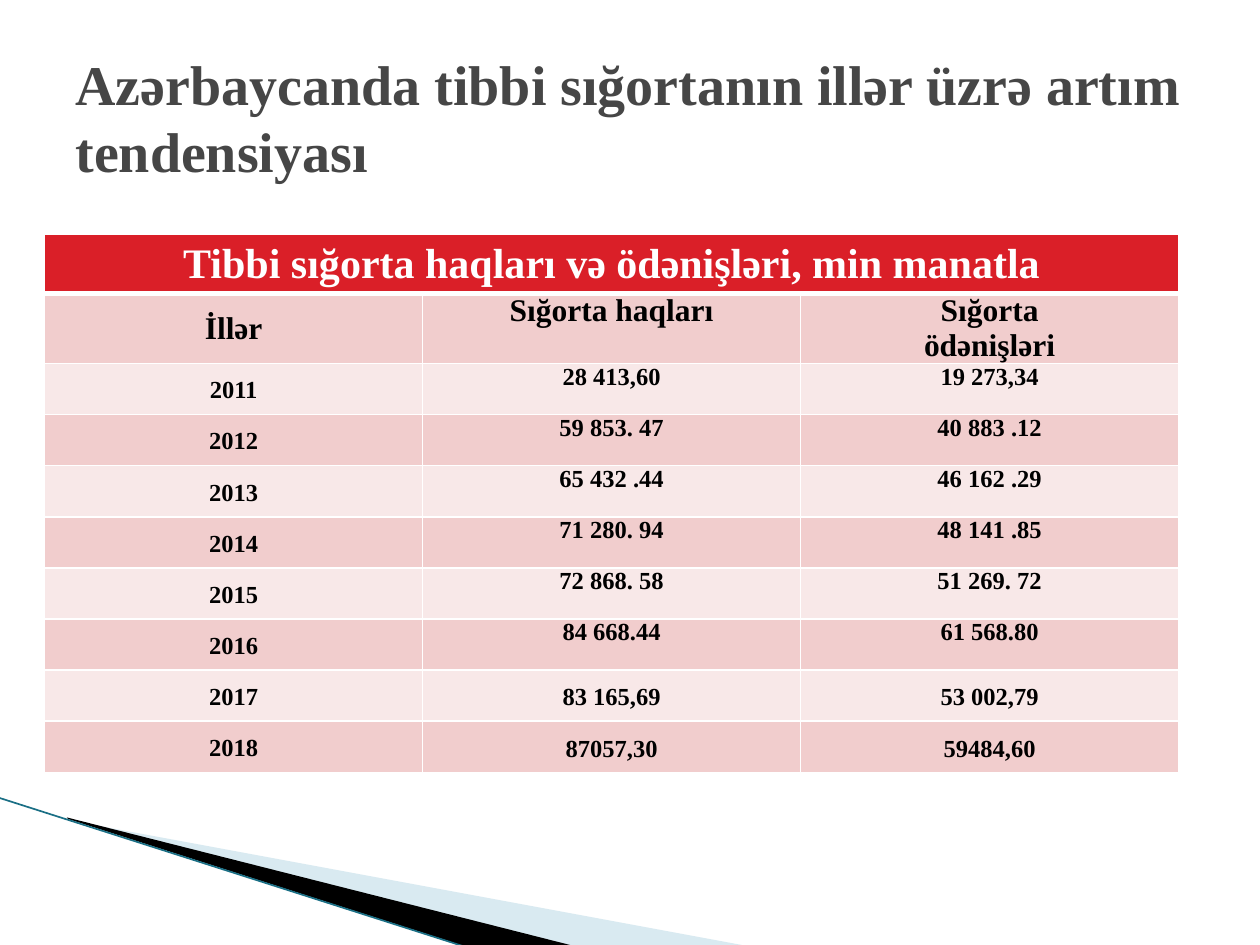
from lxml import etree
from pptx import Presentation
from pptx.dml.color import RGBColor
from pptx.enum.shapes import MSO_CONNECTOR
from pptx.enum.text import MSO_ANCHOR, PP_ALIGN
from pptx.oxml.ns import qn
from pptx.util import Cm, Pt

STRAIGHT = MSO_CONNECTOR.STRAIGHT
TOP, MIDDLE = MSO_ANCHOR.TOP, MSO_ANCHOR.MIDDLE
CENTER, LEFT = PP_ALIGN.CENTER, PP_ALIGN.LEFT
FONT = "Times New Roman"
COLORS = {
    "title": "464646", "header": "DA1F28", "dark_band": "F1CDCD",
    "light_band": "F8E8E8", "white": "FFFFFF", "black": "000000",
    "pale_blue": "A0CBDC", "line": "1A6F85",
}


def add_run(paragraph, text, size, color):
    run = paragraph.add_run()
    run.text = text
    run.font.name = FONT
    run.font.size = Pt(size)
    run.font.bold = True
    run.font.color.rgb = RGBColor.from_string(COLORS[color])


def add_borders(cell, top, bottom):
    """Draw white cell borders; top and bottom are widths in points."""
    properties = cell._tc.get_or_add_tcPr()
    for side, width in (("L", 1), ("R", 1), ("T", top), ("B", bottom)):
        line = etree.SubElement(properties, qn(f"a:ln{side}"), w=str(Pt(width)))
        fill = etree.SubElement(line, qn("a:solidFill"))
        etree.SubElement(fill, qn("a:srgbClr"), val=COLORS["white"])


presentation = Presentation()
presentation.slide_width, presentation.slide_height = Cm(25.4), Cm(19.05)
slide = presentation.slides.add_slide(presentation.slide_layouts[6])

# Corner wedges, whose outlines reach beyond their frames, and line
wedges = [
    ("pale_blue", 40, (1.98, 13.89, 10.57, 4.01),
     [(1.4, 16.54), (15.11, 19.08), (11.58, 19.08), (1.4, 16.51)]),
    ("black", 100, (-0.15, 16.08, 10.57, 2.34),
     [(1.35, 16.48), (11.61, 19.08), (9.45, 19.1), (1.37, 16.51)]),
]
for color, opacity, frame_box, corners in wedges:
    points = [(Cm(x), Cm(y)) for x, y in corners]
    builder = slide.shapes.build_freeform(*points[0], scale=1.0)
    builder.add_line_segments(points[1:], close=True)
    shape = builder.convert_to_shape()
    shape.left, shape.top, shape.width, shape.height = map(Cm, frame_box)
    outline = next(shape._element.iter(qn("a:path")))
    outline.set("w", str(shape.width))
    outline.set("h", str(shape.height))
    for point, (x, y) in zip(outline.iter(qn("a:pt")), points):
        point.set("x", str(x - shape.left))
        point.set("y", str(y - shape.top))
    shape.shadow.inherit = False
    shape.fill.solid()
    shape.fill.fore_color.rgb = RGBColor.from_string(COLORS[color])
    shape.line.fill.background()
    if opacity < 100:
        fill_color = shape._element.spPr.find(qn("a:solidFill"))[0]
        etree.SubElement(fill_color, qn("a:alpha"), val=str(opacity * 1000))

connector = slide.shapes.add_connector(STRAIGHT, Cm(-0.03), Cm(16.08), Cm(9.42), Cm(19.1))
connector.line.color.rgb = RGBColor.from_string(COLORS["line"])
connector.line.width = Pt(0.95)
etree.SubElement(connector._element.spPr, qn("a:effectLst"))

# Table
rows = [
    ("Tibbi sığorta haqları və ödənişləri, min manatla", "", ""),
    ("İllər", "Sığorta haqları", "Sığorta\nödənişləri"),
    ("2011", "28 413,60", "19 273,34"),
    ("2012", "59 853. 47", "40 883 .12"),
    ("2013", "65 432 .44", "46 162 .29"),
    ("2014", "71 280. 94", "48 141 .85"),
    ("2015", "72 868. 58", "51 269. 72"),
    ("2016", "84 668.44", "61 568.80"),
    ("2017", "83 165,69", "53 002,79"),
    ("2018", "87057,30", "59484,60"),
]
FIRST_CENTERED_ROW = 8
row_height = Cm(1.03)
table = slide.shapes.add_table(
    len(rows), 3, Cm(0.9), Cm(4.73), Cm(22.86), row_height * len(rows)).table
for column in table.columns:
    column.width = Cm(7.62)
table.cell(0, 0).merge(table.cell(0, 2))

for row_index, values in enumerate(rows):
    table.rows[row_index].height = row_height
    is_header = row_index == 0
    size = {0: 24, 1: 18}.get(row_index, 14)
    band = "header" if is_header else "dark_band" if row_index % 2 else "light_band"
    for column_index, text in enumerate(values):
        cell = table.cell(row_index, column_index)
        add_borders(cell, 3 if row_index == 1 else 1, 3 if is_header else 1)
        cell.fill.solid()
        cell.fill.fore_color.rgb = RGBColor.from_string(COLORS[band])
        centered = row_index >= FIRST_CENTERED_ROW and column_index > 0
        cell.vertical_anchor = MIDDLE if centered else TOP
        if not is_header:
            cell.margin_top = cell.margin_bottom = 0
            cell.margin_left = cell.margin_right = Cm(0.18) if centered else 0
        if not text:
            continue
        for line_index, line_text in enumerate(text.split("\n")):
            frame = cell.text_frame
            paragraph = frame.add_paragraph() if line_index else frame.paragraphs[0]
            paragraph.alignment = CENTER
            if centered:
                paragraph.line_spacing = 1.15
            elif column_index == 0 and not is_header:
                paragraph.line_spacing = 1.5
            add_run(paragraph, line_text, size, "white" if is_header else "black")

# Title
title = slide.shapes.add_textbox(Cm(1.27), Cm(0.76), Cm(22.86), Cm(3.18))
title.text_frame.word_wrap = True
title.text_frame.vertical_anchor = MIDDLE
paragraph = title.text_frame.paragraphs[0]
paragraph.alignment = LEFT
add_run(paragraph, "Azərbaycanda tibbi sığortanın illər üzrə artım tendensiyası", 32, "title")

presentation.save("out.pptx")
